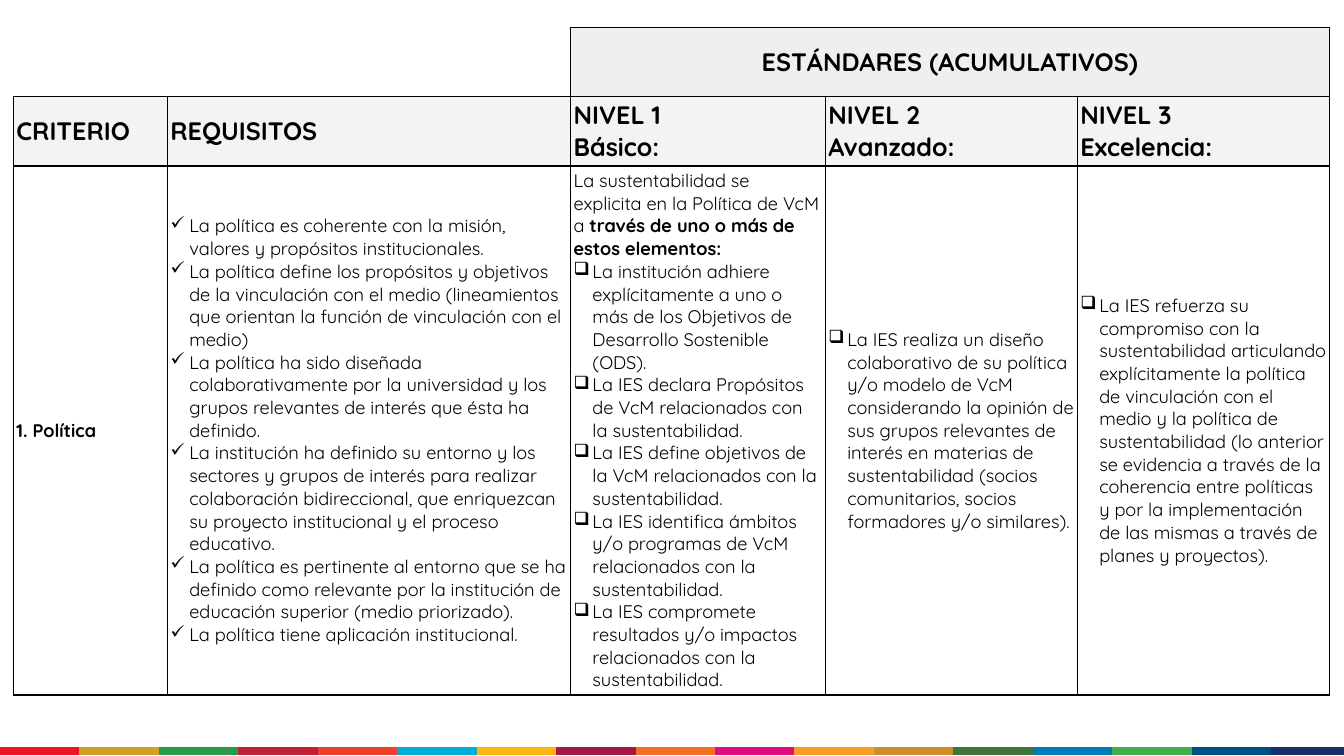
"""Build the slide of sustainability standards for the policy criterion."""
from lxml.etree import SubElement
from pptx import Presentation
from pptx.dml.color import RGBColor
from pptx.enum.shapes import MSO_CONNECTOR
from pptx.enum.text import MSO_ANCHOR, PP_ALIGN
from pptx.oxml.ns import qn
from pptx.util import Pt

FONT = "Quicksand"
BLACK = RGBColor(0x00, 0x00, 0x00)
WHITE = RGBColor(0xFF, 0xFF, 0xFF)
BANNER_GREY = RGBColor(0xEF, 0xEF, 0xEF)
HEADER_GREY = RGBColor(0xF3, 0xF3, 0xF3)
STRIPE_COLORS = [RGBColor.from_string(code) for code in (
    "EA1425", "D29F28", "279B48", "C31F33", "EF402B", "00ADD8", "FCB612", "A31941", "F36D25",
    "E00C7F", "F99C24", "CF8D2A", "427338", "007BBA", "3EB049", "004E86", "153266")]

SLIDE_WIDTH, SLIDE_HEIGHT = 960, 540
STRIPE_LENGTH, STRIPE_WIDTH, STRIPE_Y = 56.75, 6, 536.5
TABLE_LEFT, TABLE_TOP = 9.5, 19.5
COLUMN_WIDTHS = [110, 288, 182, 180, 180]
ROW_HEIGHTS = [49.4, 49.4, 377.9]
CELL_MARGIN, BULLET_INDENT = 2.25, 13.5
HEADER_SIZE, BODY_SIZE = 18, 13

HEADERS = [["CRITERIO"], ["REQUISITOS"], ["NIVEL 1", "Básico:"], ["NIVEL 2", "Avanzado:"],
           ["NIVEL 3", "Excelencia:"]]
REQUIREMENTS = [
    "La política es coherente con la misión, valores y propósitos institucionales.",
    "La política define los propósitos y objetivos de la vinculación con el medio "
    "(lineamientos que orientan la función de vinculación con el medio)",
    "La política ha sido diseñada colaborativamente por la universidad y los grupos "
    "relevantes de interés que ésta ha definido.",
    "La institución ha definido su entorno y los sectores y grupos de interés para realizar "
    "colaboración bidireccional, que enriquezcan su proyecto institucional y el proceso educativo.",
    "La política es pertinente al entorno que se ha definido como relevante por la institución "
    "de educación superior (medio priorizado).",
    "La política tiene aplicación institucional.",
]
BASIC_INTRO = "La sustentabilidad se explicita en la Política de VcM a "
BASIC_INTRO_BOLD = "través de uno o más de estos elementos:"
BASIC = [
    "La institución adhiere explícitamente a uno o más de los Objetivos de Desarrollo "
    "Sostenible (ODS).",
    "La IES declara Propósitos de VcM relacionados con la sustentabilidad.",
    "La IES define objetivos de la VcM relacionados con la sustentabilidad.",
    "La IES identifica ámbitos y/o programas de VcM relacionados con la sustentabilidad.",
    "La IES compromete resultados y/o impactos relacionados con la sustentabilidad.",
]
ADVANCED = [
    "La IES realiza un diseño colaborativo de su política y/o modelo de VcM considerando la "
    "opinión de sus grupos relevantes de interés en materias de sustentabilidad (socios "
    "comunitarios, socios formadores y/o similares).",
]
EXCELLENCE = [
    "La IES refuerza su compromiso con la sustentabilidad articulando explícitamente la política "
    "de vinculación con el medio y la política de sustentabilidad (lo anterior se evidencia a "
    "través de la coherencia entre políticas y por la implementación de las mismas a través de "
    "planes y proyectos).",
]


def add_stripes(slide):
    """Draw the row of coloured lines along the bottom edge."""
    for index, color in enumerate(STRIPE_COLORS):
        start = index * STRIPE_LENGTH
        end = min(start + STRIPE_LENGTH, SLIDE_WIDTH)
        stripe = slide.shapes.add_connector(
            MSO_CONNECTOR.STRAIGHT, Pt(start), Pt(STRIPE_Y), Pt(end), Pt(STRIPE_Y))
        stripe.line.color.rgb = color
        stripe.line.width = Pt(STRIPE_WIDTH)
        SubElement(stripe._element.spPr, qn("a:effectLst"))


def set_borders(cell, left=BLACK, right=BLACK, top=BLACK, bottom=BLACK):
    """Give the four edges of a cell a one-point line."""
    properties = cell._tc.get_or_add_tcPr()
    for side, color in zip("LRTB", (left, right, top, bottom)):
        edge = SubElement(properties, qn(f"a:ln{side}"), w=str(Pt(1)))
        SubElement(SubElement(edge, qn("a:solidFill")), qn("a:srgbClr"), val=str(color))


def style_cell(cell, fill=None):
    """Set the margins, anchor and fill of a cell."""
    cell.margin_left = cell.margin_right = Pt(CELL_MARGIN)
    cell.margin_top = cell.margin_bottom = Pt(CELL_MARGIN)
    cell.vertical_anchor = MSO_ANCHOR.MIDDLE
    if fill is None:
        cell.fill.background()
    else:
        cell.fill.solid()
        cell.fill.fore_color.rgb = fill


def add_text(cell, text, size=BODY_SIZE, bold=False, bullet=None):
    """Append a paragraph to a cell and return it."""
    frame = cell.text_frame
    paragraph = frame.add_paragraph() if frame.text else frame.paragraphs[0]
    paragraph.add_run().text = text
    if bullet:
        properties = paragraph._p.get_or_add_pPr()
        properties.set("marL", str(Pt(BULLET_INDENT)))
        properties.set("indent", str(-Pt(BULLET_INDENT)))
        SubElement(properties, qn("a:buChar"), char=bullet)
    font = paragraph.font
    font.name, font.size, font.bold = FONT, Pt(size), bold
    font.color.rgb = BLACK
    return paragraph


def add_list(cell, items, bullet):
    """Append bulleted paragraphs to a cell."""
    for item in items:
        add_text(cell, item, bullet=bullet)


def add_grid(slide):
    """Add the empty table with its sizes and borders."""
    table = slide.shapes.add_table(
        len(ROW_HEIGHTS), len(COLUMN_WIDTHS), Pt(TABLE_LEFT), Pt(TABLE_TOP),
        Pt(sum(COLUMN_WIDTHS)), Pt(sum(ROW_HEIGHTS))).table
    table.first_row = table.horz_banding = False
    for column, width in zip(table.columns, COLUMN_WIDTHS):
        column.width = Pt(width)
    for row, height in zip(table.rows, ROW_HEIGHTS):
        row.height = Pt(height)
    for row_index in range(len(ROW_HEIGHTS)):
        for column_index in range(len(COLUMN_WIDTHS)):
            cell = table.cell(row_index, column_index)
            if row_index == 0 and column_index < 2:
                set_borders(cell, left=WHITE, top=WHITE)
            else:
                set_borders(cell)
            style_cell(cell, (BANNER_GREY, HEADER_GREY, None)[row_index])
    return table


def fill_headers(table):
    """Write the banner and the column headings."""
    blank_corner, banner = table.cell(0, 0), table.cell(0, 2)
    blank_corner.merge(table.cell(0, 1))
    blank_corner.fill.background()
    banner.merge(table.cell(0, 4))
    title = add_text(banner, "ESTÁNDARES (ACUMULATIVOS)", HEADER_SIZE, bold=True)
    title.alignment = PP_ALIGN.CENTER
    for column_index, lines in enumerate(HEADERS):
        for line in lines:
            add_text(table.cell(1, column_index), line, HEADER_SIZE, bold=True)


def fill_criterion(table):
    """Write the criterion, its requirements and its three levels."""
    criterion, requirements, basic, advanced, excellence = table.rows[2].cells
    add_text(criterion, "1. Política", bold=True)
    add_list(requirements, REQUIREMENTS, "✓")
    emphasis = add_text(basic, BASIC_INTRO).add_run()
    emphasis.text = BASIC_INTRO_BOLD
    emphasis.font.bold = True
    for level, items in ((basic, BASIC), (advanced, ADVANCED), (excellence, EXCELLENCE)):
        add_list(level, items, "❑")


def main():
    """Build and save the presentation."""
    presentation = Presentation()
    presentation.slide_width, presentation.slide_height = Pt(SLIDE_WIDTH), Pt(SLIDE_HEIGHT)
    slide = presentation.slides.add_slide(presentation.slide_layouts[6])
    add_stripes(slide)
    table = add_grid(slide)
    fill_headers(table)
    fill_criterion(table)
    presentation.save("out.pptx")


if __name__ == "__main__":
    main()
